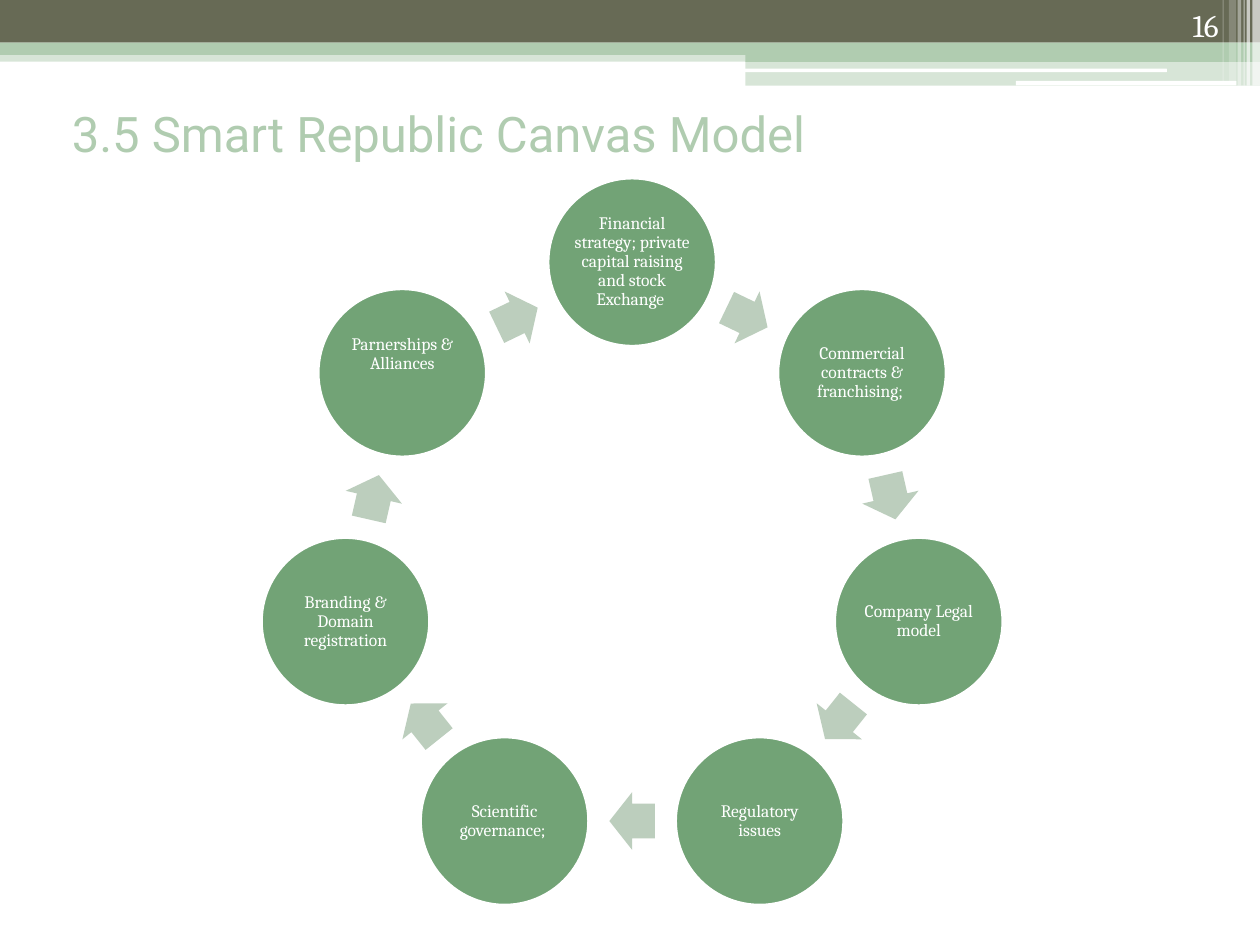
"""Build the Smart Republic Canvas Model slide, a cycle of seven topics."""
import math
import lxml.etree
import pptx
import pptx.dml.color
import pptx.enum.shapes
import pptx.enum.text
import pptx.oxml.ns
import pptx.util

Pt = pptx.util.Pt
RGB = pptx.dml.color.RGBColor
KIND = pptx.enum.shapes.MSO_SHAPE
ALIGN = pptx.enum.text.PP_ALIGN
ANCHOR = pptx.enum.text.MSO_ANCHOR

WHITE = RGB(0xFF, 0xFF, 0xFF)
OLIVE = RGB(0x67, 0x6A, 0x55)
MINT = RGB(0xB0, 0xCC, 0xB0)
GREEN = RGB(0x72, 0xA3, 0x76)
PALE = RGB(0xBC, 0xCE, 0xBD)

deck = pptx.Presentation()
deck.slide_width, deck.slide_height = Pt(720), Pt(540)
slide = deck.slides.add_slide(deck.slide_layouts[6])


def add_shape(kind, box, color, alpha=100):
    shape = slide.shapes.add_shape(kind, *map(Pt, box))
    shape.shadow.inherit = False
    shape.fill.solid()
    shape.fill.fore_color.rgb = color
    shape.line.fill.background()
    if alpha < 100:
        tone = shape.fill._xPr.find(".//" + pptx.oxml.ns.qn("a:srgbClr"))
        node = lxml.etree.SubElement(tone, pptx.oxml.ns.qn("a:alpha"))
        node.set("val", str(alpha * 1000))
    return shape


def add_text(box, text, font, size, color, align, anchor):
    frame = slide.shapes.add_textbox(*map(Pt, box)).text_frame
    frame.word_wrap = True
    frame.vertical_anchor = anchor
    para = frame.paragraphs[0]
    para.alignment = align
    for i, line in enumerate(text.split("\n")):
        if i:
            para.add_line_break()
        if line:
            run = para.add_run()
            run.text = line
            run.font.name = font
            run.font.size = Pt(size)
            run.font.color.rgb = color
    return frame


bands = [
    (0, 28.8, 720, 6.5, MINT, 50),
    (0, 0, 720, 24.4, OLIVE, 100),
    (0, 24.4, 720, 7, MINT, 100),
    (425.9, 28.3, 294.1, 7.1, MINT, 100),
    (425.9, 35.2, 294.1, 13.7, MINT, 50),
]
bars = [
    (425.6, 39.2, 241.2, 2.1),
    (580.5, 46.2, 126, 2.6),
]
stripes = [
    (715.6, 4.4, 49, 65),
    (712.3, 2, 49, 65),
    (710.6, 0.7, 49, 60),
    (707.2, 2, 49, 40),
    (702.2, 4, 46.3, 20),
    (698.6, 0.7, 46.3, 30),
]
for *box, color, alpha in bands:
    add_shape(KIND.RECTANGLE, box, color, alpha)
for box in bars:
    add_shape(KIND.ROUNDED_RECTANGLE, box, WHITE)
for left, width, height, alpha in stripes:
    add_shape(KIND.RECTANGLE, (left, 0, width, height), WHITE, alpha)

add_text((34, 34, 648, 84), "3.5 Smart Republic Canvas Model",
         "Roboto", 28, MINT, ALIGN.LEFT, ANCHOR.MIDDLE)

topics = [
    "Financial strategy; private capital raising and stock Exchange ",
    "Commercial contracts & franchising; ",
    "Company Legal model",
    "Regulatory issues",
    "Scientific governance; ",
    "Branding & Domain registration",
    "Parnerships & Alliances\n",
]
MID_X, MID_Y, RING = 361.2, 317.8, 168
DISC, LABEL = 96, 68.4
LONG, WIDE = 26, 33
step = 360 / len(topics)
inner = RING * math.cos(math.radians(step / 2))

for i, topic in enumerate(topics):
    turn = math.radians(i * step)
    x = MID_X + RING * math.sin(turn)
    y = MID_Y - RING * math.cos(turn)
    disc = add_shape(KIND.OVAL, (x - DISC / 2, y - DISC / 2, DISC, DISC), GREEN)
    disc.line.color.rgb = WHITE
    disc.line.width = Pt(1.5)
    box = (x - LABEL / 2, y - LABEL / 2, LABEL, LABEL)
    frame = add_text(box, topic, "Cambria", 10, WHITE, ALIGN.CENTER, ANCHOR.MIDDLE)
    frame.margin_left = frame.margin_right = Pt(1)
    frame.margin_top = frame.margin_bottom = Pt(1)
    frame.paragraphs[0].line_spacing = 0.9
    frame.paragraphs[0].space_after = Pt(3.5)

    angle = (i + 0.5) * step
    turn = math.radians(angle)
    x = MID_X + inner * math.sin(turn)
    y = MID_Y - inner * math.cos(turn)
    box = (x - LONG / 2, y - WIDE / 2, LONG, WIDE)
    arrow = add_shape(KIND.RIGHT_ARROW, box, PALE)
    arrow.adjustments[0] = 0.6
    arrow.adjustments[1] = 0.5
    arrow.rotation = angle

add_text((643.7, 0, 59.8, 28.8), "16", "Cambria", 18, WHITE,
         ALIGN.RIGHT, ANCHOR.BOTTOM)

deck.save("out.pptx")
